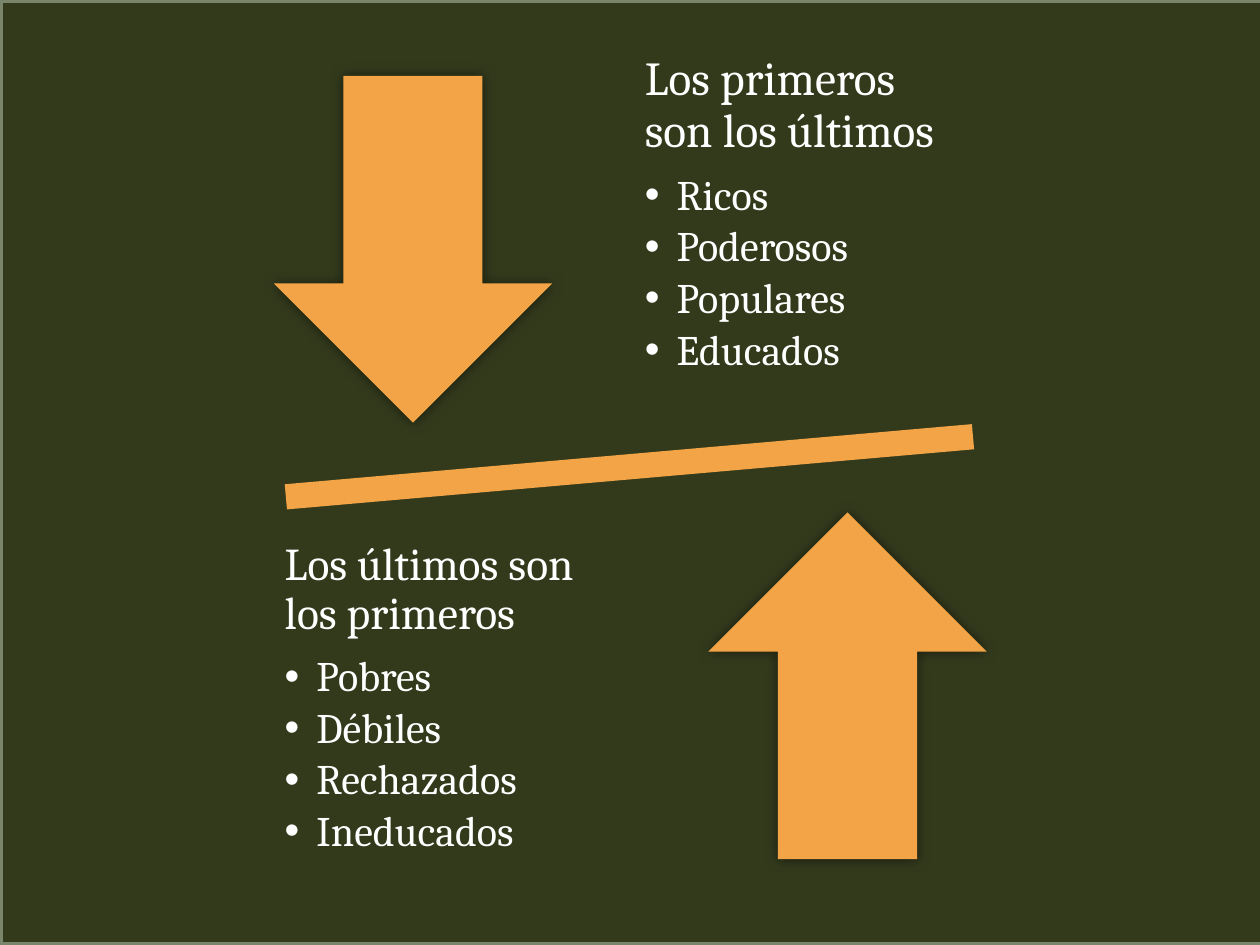
import pptx
import pptx.dml.color
import pptx.enum.shapes
import pptx.enum.text
import pptx.oxml
import pptx.oxml.ns
import pptx.util
from pptx.util import Cm

COLOURS = {"page": "000000", "panel": "333A1C", "border": "7A866C",
           "accent": "F3A447", "text": "FFFFFF"}
PRESETS = pptx.enum.shapes.MSO_SHAPE


def colour(name):
    return pptx.dml.color.RGBColor.from_string(COLOURS[name])


def child_xml(tag, attributes="", inner=""):
    return pptx.oxml.parse_xml(
        f'<a:{tag} {pptx.oxml.ns.nsdecls("a")} {attributes}>{inner}</a:{tag}>')


def format_text(para, text, size, gap, level=0, bullet=False):
    """Write one paragraph; gap is the space after, as a share of the size."""
    para.level = level
    para.line_spacing = 0.9
    para.space_before = pptx.util.Pt(0)
    para.space_after = pptx.util.Pt(size * gap)
    para.alignment = pptx.enum.text.PP_ALIGN.LEFT
    properties = para._p.get_or_add_pPr()
    indent = Cm(0.64) if bullet else 0
    properties.set("marL", str(indent))
    properties.set("indent", str(-indent))
    if bullet:
        properties.append(child_xml("buFont", 'typeface="Arial"'))
        properties.append(child_xml("buChar", 'char="•"'))
    else:
        properties.append(child_xml("buNone"))
    span = para.add_run()
    span.text = text
    span.font.name = "Cambria"
    span.font.size = pptx.util.Pt(size)
    span.font.color.rgb = colour("text")


class PageBuilder:
    def __init__(self, deck):
        self.page = deck.slides.add_slide(deck.slide_layouts.get_by_name("Two Content"))
        self.page.background.fill.solid()
        self.page.background.fill.fore_color.rgb = colour("page")
        title = self.page.shapes.title
        title._element.getparent().remove(title._element)

    def shape(self, preset, place, fill="accent", border=None, rotation=0):
        box = self.page.shapes.add_shape(preset, *map(Cm, place))
        box.shadow.inherit = False
        box.fill.solid()
        box.fill.fore_color.rgb = colour(fill)
        box.rotation = rotation
        if border:
            box.line.color.rgb = colour(border)
            box.line.width = pptx.util.Pt(3)
        else:
            box.line.fill.background()
        return box

    def arrow(self, preset, left, top):
        box = self.shape(preset, (left, top, 5.61, 6.99))
        effects = box._element.spPr.find(pptx.oxml.ns.qn("a:effectLst"))
        effects.append(child_xml(
            "outerShdw", f'blurRad="{pptx.util.Pt(7.5)}" dist="0" dir="0" rotWithShape="0"',
            '<a:srgbClr val="000000"><a:alpha val="50000"/></a:srgbClr>'))

    def topic(self, index, place, heading, size, items, bottom=0.48):
        """Fill a body placeholder with a heading and its bullets, in front."""
        box = self.page.placeholders[index]
        box.left, box.top, box.width, box.height = map(Cm, place)
        self.page.shapes._spTree.append(box._element)
        frame = box.text_frame
        frame.word_wrap = True
        frame.auto_size = pptx.enum.text.MSO_AUTO_SIZE.NONE
        frame.vertical_anchor = pptx.enum.text.MSO_ANCHOR.MIDDLE
        frame.margin_left = frame.margin_right = frame.margin_top = Cm(0.48)
        frame.margin_bottom = Cm(bottom)
        format_text(frame.paragraphs[0], heading, size=size, gap=0.35)
        for item in items:
            format_text(frame.add_paragraph(), item, size=24, gap=0.15,
                        level=1, bullet=True)


def main():
    deck = pptx.Presentation()
    deck.slide_width, deck.slide_height = Cm(25.4), Cm(19.05)
    builder = PageBuilder(deck)
    builder.shape(PRESETS.RECTANGLE, (0, 0, 25.6, 19.05), fill="panel", border="border")
    builder.shape(PRESETS.MATH_MINUS, (3.23, 8.33, 18.92, 2.16), rotation=355)
    builder.arrow(PRESETS.DOWN_ARROW, left=5.52, top=1.53)
    builder.arrow(PRESETS.UP_ARROW, left=14.28, top=10.33)
    builder.topic(1, (12.52, 0.64, 7.57, 7.37), "Los primeros son los últimos", 27,
                  ["Ricos", "Poderosos", "Populares", "Educados"])
    builder.topic(2, (5.26, 10.82, 7.67, 7.37), "Los últimos son los primeros", 26,
                  ["Pobres", "Débiles", "Rechazados", "Ineducados"], bottom=1.33)
    deck.save("out.pptx")


if __name__ == "__main__":
    main()
